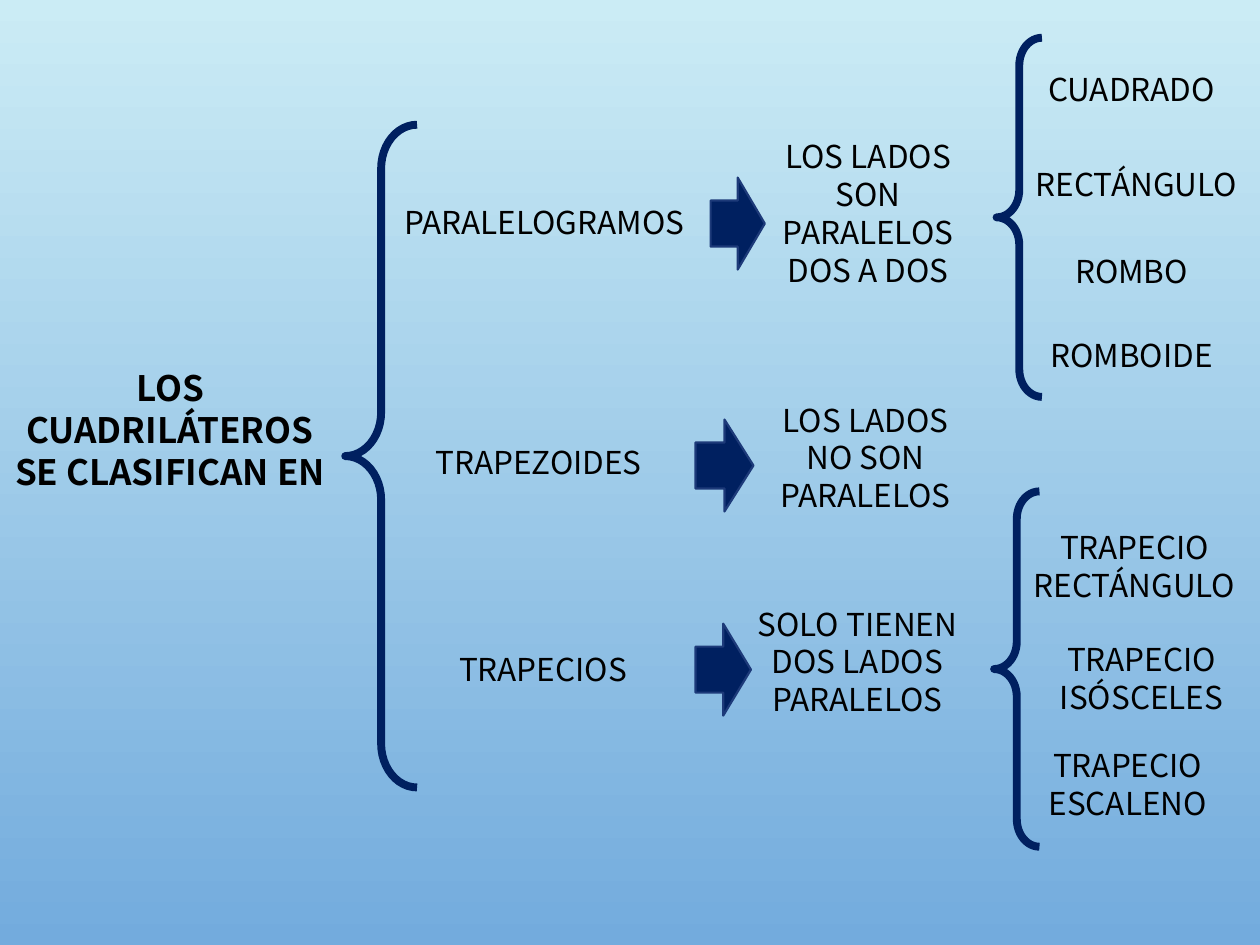
from pptx import Presentation
from pptx.dml.color import RGBColor
from pptx.enum.shapes import MSO_SHAPE
from pptx.enum.text import MSO_ANCHOR, PP_ALIGN
from pptx.util import Inches, Pt

BRACE, ARROW = MSO_SHAPE.LEFT_BRACE, MSO_SHAPE.RIGHT_ARROW
TOP, CENTER = MSO_ANCHOR.TOP, PP_ALIGN.CENTER
NAVY = RGBColor(0x00, 0x20, 0x60)
EDGE = RGBColor(0x1D, 0x3A, 0x79)
BLACK = RGBColor(0, 0, 0)
SKY = RGBColor(0xCB, 0xEC, 0xF5)
BLUE = RGBColor(0x73, 0xAB, 0xDD)
FONT = "Noto Sans CJK SC"
LINE, PAD = 0.3, 0.1  # text line height and total vertical inset
ARROW_H = 0.73

# Boxes: text, number of lines, left, top, width (inches)
TITLE = ("LOS CUADRILÁTEROS\nSE CLASIFICAN EN", 3, 0, 2.86, 2.7)
CLASSES = [
    ("PARALELOGRAMOS", 1, 3.04, 1.56, 2.56),
    ("TRAPEZOIDES", 1, 3.26, 3.47, 2.03),
    ("TRAPECIOS", 1, 3.49, 5.11, 1.64),
]
RULES = [
    ("LOS LADOS SON\nPARALELOS\nDOS A DOS", 4, 6.07, 1.04, 1.64),
    ("LOS LADOS\nNO SON\nPARALELOS", 3, 6.05, 3.13, 1.64),
    ("SOLO TIENEN DOS LADOS PARALELOS", 3, 5.89, 4.75, 1.83),
]
KINDS = [
    ("CUADRADO", 1, 8.04, 0.51, 1.88),
    ("RECTÁNGULO", 1, 8.04, 1.26, 1.96),
    ("ROMBO", 1, 8.04, 1.95, 1.88),
    ("ROMBOIDE", 1, 8.04, 2.62, 1.88),
    ("TRAPECIO RECTÁNGULO", 2, 8.01, 4.14, 1.99),
    ("TRAPECIO ISÓSCELES", 2, 8.12, 5.03, 1.88),
    ("TRAPECIO ESCALENO", 2, 8.01, 5.87, 1.88),
]
# Left, top, width, height
BRACES = [
    (2.74, 0.99, 0.57, 5.26),
    (7.91, 0.3, 0.36, 2.85),
    (7.89, 3.9, 0.36, 2.82),
]
# Left, top, width
ARROWS = [(5.64, 1.41, 0.43), (5.52, 3.33, 0.46), (5.52, 4.95, 0.44)]


def add_shape(slide, kind, place, color, weight):
    shape = slide.shapes.add_shape(kind, *map(Inches, place))
    shape.shadow.inherit = False
    shape.line.color.rgb = color
    shape.line.width = Pt(weight)
    return shape


def add_label(slide, text, lines, left, top, width, size=18, bold=False):
    height = lines * LINE * size / 18 + PAD
    box = slide.shapes.add_textbox(*map(Inches, (left, top, width, height)))
    frame = box.text_frame
    frame.word_wrap = True
    frame.vertical_anchor = TOP
    frame.text = text
    for para in frame.paragraphs:
        para.alignment = CENTER
        for run in para.runs:
            run.font.name = FONT
            run.font.size = Pt(size)
            run.font.bold = bold
            run.font.color.rgb = BLACK


def paint_back(slide):
    fill = slide.background.fill
    fill.gradient()
    fill.gradient_angle = 270
    for stop, color, place in zip(fill.gradient_stops, (SKY, BLUE), (0, 1)):
        stop.color.rgb = color
        stop.position = place


def main():
    prs = Presentation()
    prs.slide_width, prs.slide_height = Inches(10), Inches(7.5)
    slide = prs.slides.add_slide(prs.slide_layouts[6])
    paint_back(slide)

    for place in BRACES:
        brace = add_shape(slide, BRACE, place, NAVY, 4.5)
        brace.fill.background()
        brace.adjustments[0] = 0.61
    for place in ARROWS:
        arrow = add_shape(slide, ARROW, (*place, ARROW_H), EDGE, 1.25)
        arrow.fill.solid()
        arrow.fill.fore_color.rgb = NAVY

    add_label(slide, *TITLE, size=20, bold=True)
    for label in CLASSES + RULES + KINDS:
        add_label(slide, *label)
    prs.save("out.pptx")


if __name__ == "__main__":
    main()
